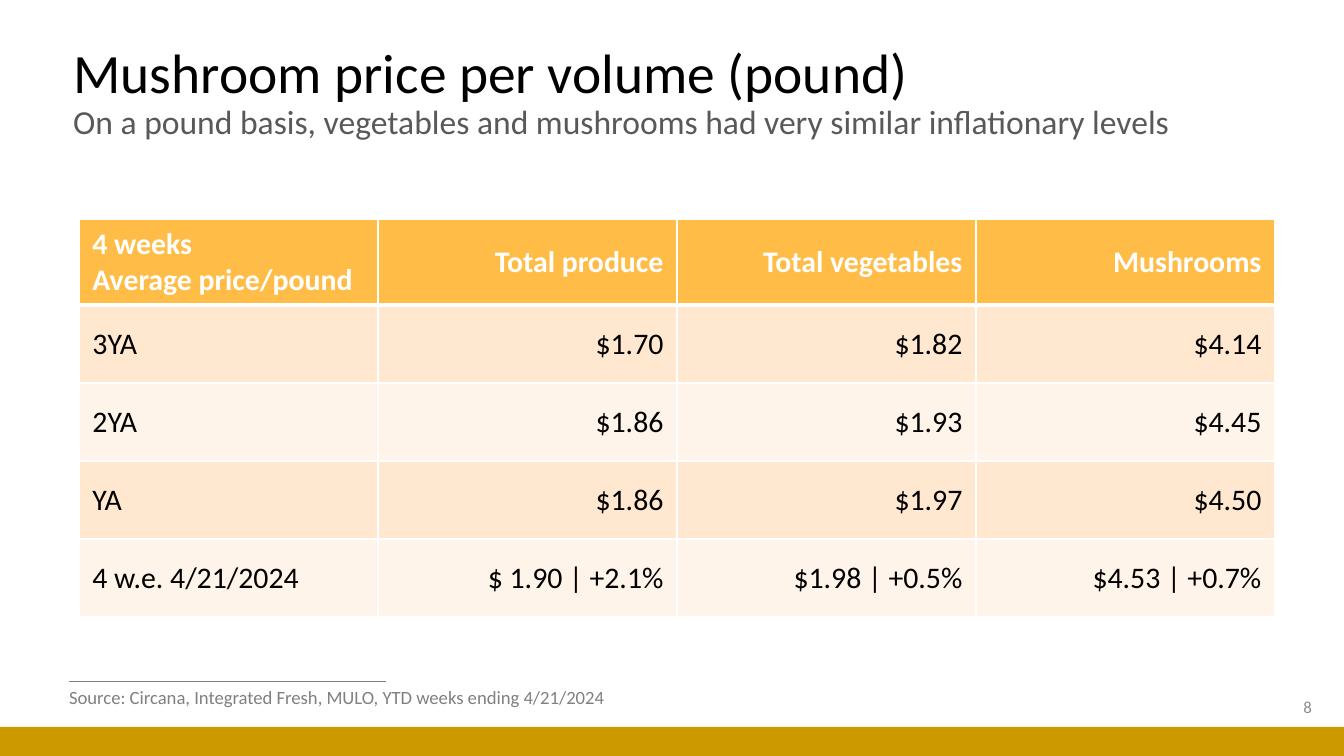
"""Build the slide comparing mushroom prices per pound with produce and vegetables."""
from lxml.etree import SubElement
from pptx import Presentation
from pptx.dml.color import RGBColor
from pptx.enum.shapes import MSO_CONNECTOR, MSO_SHAPE
from pptx.enum.text import MSO_ANCHOR, PP_ALIGN
from pptx.oxml.ns import qn
from pptx.util import Pt

PX = 9144000 / 1344
THEME = {
    "font": "Calibri",
    "black": "000000", "white": "FFFFFF", "subtitle": "595959",
    "footer": "808080", "number": "8C8C8C", "bar": "CC9900",
    "header": "FFBD47", "bands": ("FFE8CF", "FFF4E9"),
    "title_size": 29.7, "subtitle_size": 18, "table_size": 16,
    "source_size": 10, "number_size": 9,
}


def px(*lengths):
    return [round(length * PX) for length in lengths]


def write(paragraph, text, size, color, bold=False):
    run = paragraph.add_run()
    run.text = text
    run.font.color.rgb = RGBColor.from_string(THEME[color])
    style = {"name": THEME["font"], "size": Pt(THEME[size]), "bold": bold}
    for name, value in style.items():
        setattr(run.font, name, value)


presentation = Presentation()
presentation.slide_width, presentation.slide_height = px(1344, 756)
slide = presentation.slides.add_slide(presentation.slide_layouts[6])
shapes = slide.shapes

rule = shapes.add_connector(MSO_CONNECTOR.STRAIGHT, *px(69, 682, 386, 682))
rule.line.color.rgb = RGBColor.from_string(THEME["footer"])
rule.line.width = Pt(0.5)
SubElement(rule._element.spPr, qn("a:effectLst"))

bar = shapes.add_shape(MSO_SHAPE.RECTANGLE, *px(0, 727, 1344, 29))
bar.shadow.inherit = False
bar.fill.solid()
bar.fill.fore_color.rgb = RGBColor.from_string(THEME["bar"])
bar.line.fill.background()

title = shapes.add_textbox(*px(60, 30, 1175, 128)).text_frame
title.word_wrap = True
title.vertical_anchor = MSO_ANCHOR.MIDDLE
heading = title.paragraphs[0]
heading.line_spacing = 0.9
write(heading, "Mushroom price per volume (pound)", "title_size", "black")
heading.add_line_break()
write(heading, "On a pound basis, vegetables and mushrooms had very similar inflationary levels",
      "subtitle_size", "subtitle")

number = shapes.add_textbox(*px(1023, 687, 302, 40)).text_frame
number.word_wrap = True
number.vertical_anchor = MSO_ANCHOR.MIDDLE
number.paragraphs[0].alignment = PP_ALIGN.RIGHT
write(number.paragraphs[0], "8", "number_size", "number")

prices = [
    ("4 weeks\nAverage price/pound", "Total produce", "Total vegetables", "Mushrooms"),
    ("3YA", "$1.70", "$1.82", "$4.14"),
    ("2YA", "$1.86", "$1.93", "$4.45"),
    ("YA", "$1.86", "$1.97", "$4.50"),
    ("4 w.e. 4/21/2024", "$ 1.90 | +2.1%", "$1.98 | +0.5%", "$4.53 | +0.7%"),
]
HEADER_HEIGHT, ROW_HEIGHT, COLUMN_WIDTH = px(86, 78, 299)
table = shapes.add_table(5, 4, *px(79, 219, 1196, 398)).table
for column in table.columns:
    column.width = COLUMN_WIDTH
for row_index, row in enumerate(prices):
    is_header = row_index == 0
    table.rows[row_index].height = HEADER_HEIGHT if is_header else ROW_HEIGHT
    fill = THEME["header"] if is_header else THEME["bands"][(row_index - 1) % 2]
    borders = {"a:lnL": 1, "a:lnR": 1, "a:lnT": 3 if row_index == 1 else 1,
               "a:lnB": 3 if is_header else 1}
    for column_index, text in enumerate(row):
        cell = table.cell(row_index, column_index)
        properties = cell._tc.get_or_add_tcPr()
        for tag, width in borders.items():
            border = SubElement(properties, qn(tag), w=str(Pt(width)))
            SubElement(SubElement(border, qn("a:solidFill")), qn("a:srgbClr"), val=THEME["white"])
        cell.fill.solid()
        cell.fill.fore_color.rgb = RGBColor.from_string(fill)
        cell.vertical_anchor = MSO_ANCHOR.MIDDLE
        for line_index, line in enumerate(text.split("\n")):
            frame = cell.text_frame
            paragraph = frame.add_paragraph() if line_index else frame.paragraphs[0]
            paragraph.alignment = PP_ALIGN.RIGHT if column_index else PP_ALIGN.LEFT
            write(paragraph, line, "table_size", "white" if is_header else "black", is_header)

source = shapes.add_textbox(*px(56, 679, 579, 36)).text_frame
source.word_wrap = False
write(source.paragraphs[0], "Source: Circana, Integrated Fresh, MULO, YTD weeks ending 4/21/2024",
      "source_size", "footer")

presentation.save("out.pptx")
